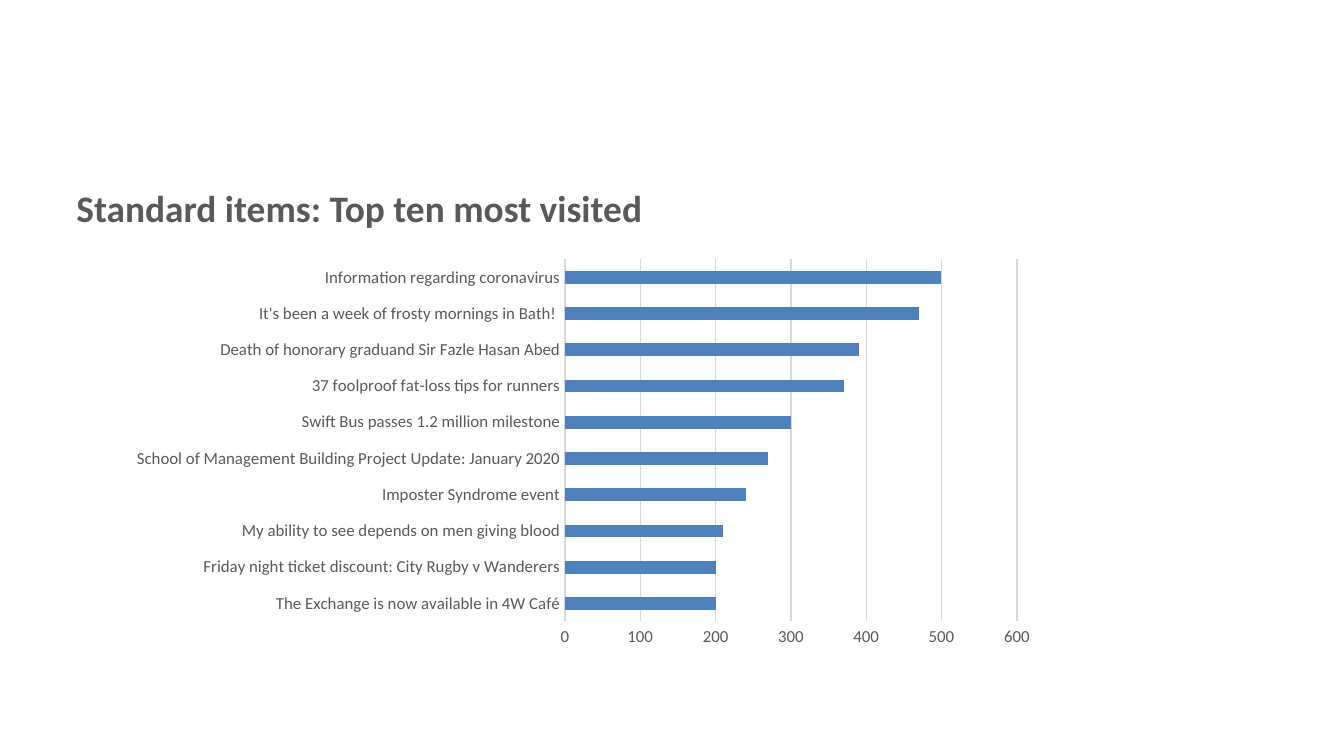
"""Build a slide with a bar chart of the ten most visited standard items."""
from typing import NamedTuple

from pptx import Presentation
from pptx.chart.data import CategoryChartData
from pptx.dml.color import RGBColor
from pptx.enum.chart import XL_CHART_TYPE as ChartType, XL_TICK_MARK as TickMark
from pptx.util import Inches, Pt

GREY = RGBColor(0x59, 0x59, 0x59)
RULE = RGBColor(0xD9, 0xD9, 0xD9)
BLUE = RGBColor(0x4F, 0x81, 0xBD)
BLACK = RGBColor(0, 0, 0)
WHITE = RGBColor(0xFF, 0xFF, 0xFF)
FACE = "Calibri"


class Box(NamedTuple):
    left: float
    top: float
    width: float
    height: float

    def lengths(self) -> list:
        return [Inches(side) for side in self]


class Item(NamedTuple):
    headline: str
    visits: int


ITEMS = [
    Item("Information regarding coronavirus", 500),
    Item("It's been a week of frosty mornings in Bath! ", 470),
    Item("Death of honorary graduand Sir Fazle Hasan Abed", 390),
    Item("37 foolproof fat-loss tips for runners", 370),
    Item("Swift Bus passes 1.2 million milestone", 300),
    Item("School of Management Building Project Update: January 2020", 270),
    Item("Imposter Syndrome event", 240),
    Item("My ability to see depends on men giving blood", 210),
    Item("Friday night ticket discount: City Rugby v Wanderers", 200),
    Item("The Exchange is now available in 4W Café", 200),
]


def style_font(font, size: float, color: RGBColor, bold: bool = False) -> None:
    font.name, font.size, font.bold = FACE, Pt(size), bold
    font.color.rgb = color


def style_line(line, color: RGBColor) -> None:
    line.color.rgb = color
    line.width = Pt(0.75)


def add_text(slide, box: Box, text: str, *, size: float, color: RGBColor, bold: bool = False) -> None:
    frame = slide.shapes.add_textbox(*box.lengths()).text_frame
    frame.word_wrap = True
    run = frame.paragraphs[0].add_run()
    run.text = text
    style_font(run.font, size, color, bold)


def add_visits_chart(slide, box: Box, items: list[Item]) -> None:
    upward = items[::-1]
    visits = CategoryChartData()
    visits.categories = [item.headline for item in upward]
    visits.add_series("Series 1", [item.visits for item in upward])
    chart = slide.shapes.add_chart(ChartType.BAR_CLUSTERED, *box.lengths(), visits).chart
    chart.has_legend = chart.has_title = False
    style_font(chart.font, 10, BLACK)

    bars = chart.plots[0]
    bars.gap_width = 182
    bars.vary_by_categories = False
    fill = bars.series[0].format.fill
    fill.solid()
    fill.fore_color.rgb = BLUE

    headlines, scale = chart.category_axis, chart.value_axis
    for axis in (headlines, scale):
        axis.major_tick_mark = axis.minor_tick_mark = TickMark.NONE
        style_font(axis.tick_labels.font, 9, GREY)
    style_line(headlines.format.line, RULE)
    headlines.has_major_gridlines = False
    scale.minimum_scale, scale.maximum_scale, scale.major_unit = 0, 600, 100
    scale.format.line.fill.background()
    scale.has_major_gridlines = True
    style_line(scale.major_gridlines.format.line, RULE)


def main() -> None:
    deck = Presentation()
    deck.slide_width = Inches(10)
    deck.slide_height = Inches(10 * 9 / 16)
    slide = deck.slides.add_slide(deck.slide_layouts[6])
    slide.background.fill.solid()
    slide.background.fill.fore_color.rgb = WHITE
    add_text(slide, Box(0.47, 1.33, 7.75, 0.67), "Standard items: Top ten most visited",
             size=20, color=GREY, bold=True)
    add_visits_chart(slide, Box(0.88, 1.87, 6.92, 3), ITEMS)
    deck.save("out.pptx")


if __name__ == "__main__":
    main()
